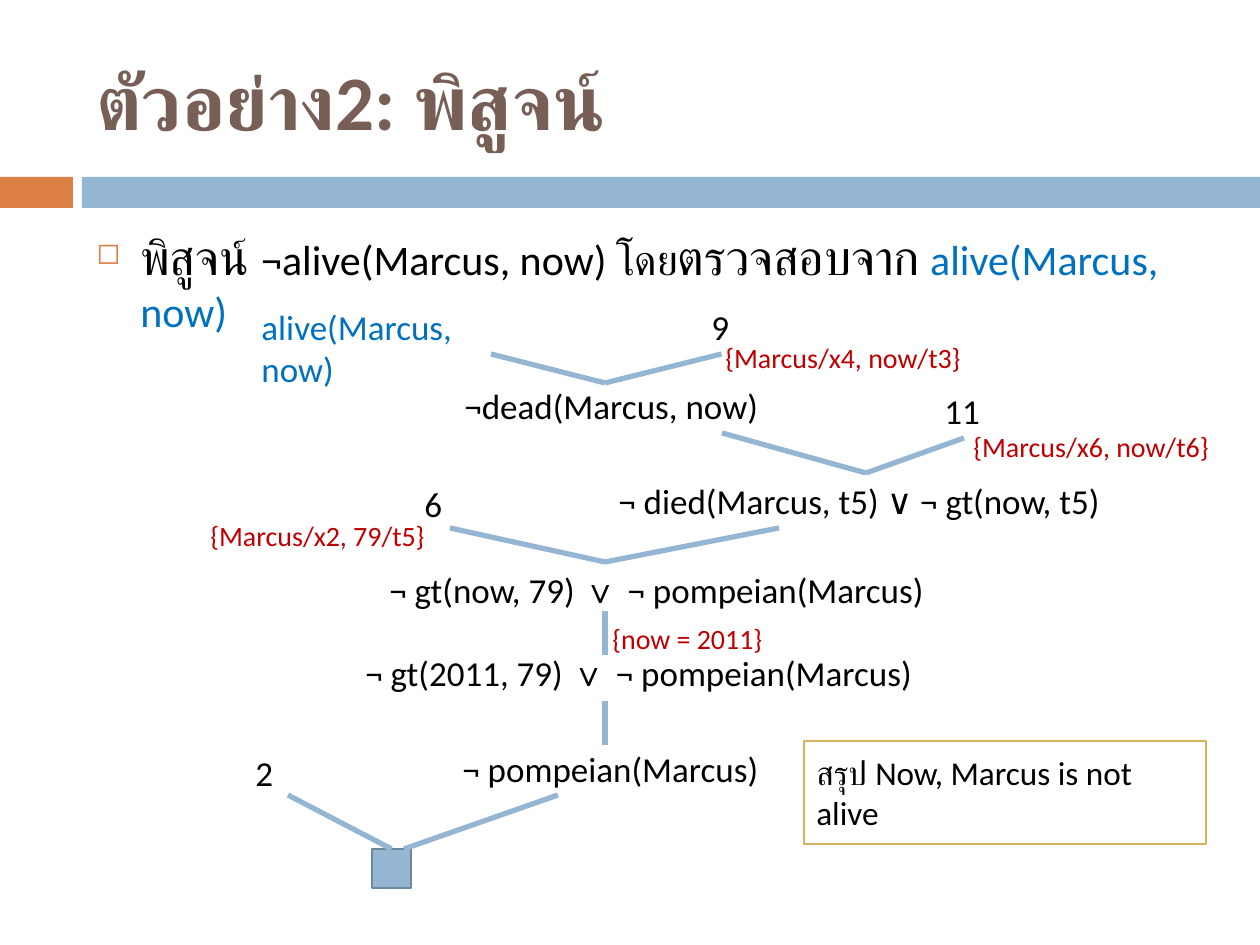
from lxml.etree import SubElement
from pptx import Presentation
from pptx.dml.color import RGBColor
from pptx.enum.shapes import MSO_CONNECTOR as Connector, MSO_SHAPE as Shape
from pptx.enum.text import MSO_ANCHOR as Anchor
from pptx.oxml.ns import qn
from pptx.util import Pt

PX = 914400 / 126
BLUE, ORANGE, BROWN, GOLD = "94B6D2", "DD8047", "775F55", "D8B25C"
BLACK, WHITE, RED, LINK, SLATE = "000000", "FFFFFF", "C00000", "0070C0", "6D879B"
TOP, BOTTOM = 0, 2

CLAUSES = {
    "alive": (51, 0, 284, LINK, ["alive(Marcus, now)"]),
    "nine": (501, 0, 45, BLACK, ["9"]),
    "dead": (254, 79, 336, BLACK, ["¬dead(Marcus, now)"]),
    "died": (408, 174, 520, BLACK, ["¬ died(Marcus, t5) ∨ ¬ gt(now, t5)"]),
    "eleven": (734, 84, 64, BLACK, ["11"]),
    "gt_now": (179, 263, 561, BLACK, ["¬ gt(now, 79) ", "∨ ", "¬ pompeian(Marcus)"]),
    "six": (214, 177, 45, BLACK, ["6"]),
    "gt_2011": (155, 346, 586, BLACK, ["¬ gt(2011, 79) ", "∨ ", "¬ pompeian(Marcus)"]),
    "pompeian": (252, 442, 329, BLACK, ["¬ pompeian(Marcus)"]),
    "two": (45, 446, 45, BLACK, ["2"]),
}
SUBSTITUTIONS = [
    (515, 35, 265, "{Marcus/x4, now/t3}"),
    (763, 124, 265, "{Marcus/x6, now/t6}"),
    (0, 213, 251, "{Marcus/x2, 79/t5}"),
    (402, 316, 186, "{now = 2011}"),
]
BRANCHES = [
    ((293, 55), (407, 84)),
    (("nine", BOTTOM), (407, 84)),
    ((524, 134), ("died", TOP)),
    (("eleven", BOTTOM), ("died", TOP)),
    ((252, 229), (407, 263)),
    ((581, 229), (407, 263)),
    ((407, 312), (407, 356)),
    ((407, 402), (407, 446)),
    ((90, 496), ("empty", TOP)),
    ((360, 496), (206, 550)),
]


def px(*values):
    """Turn pixel lengths into EMU."""
    return [round(value * PX) for value in values]


def color(code):
    """Turn a hex string into a colour."""
    return RGBColor.from_string(code)


def add_span(para, text, size, code, font="Calibri", bold=False):
    """Add one formatted run to a paragraph."""
    span = para.add_run()
    span.text = text
    span.font.size, span.font.name, span.font.bold = Pt(size), font, bold
    span.font.color.rgb = color(code)


def add_text(page, box, anchor=Anchor.TOP):
    """Add a wrapping text box and return it."""
    text_box = page.shapes.add_textbox(*px(*box))
    text_box.text_frame.word_wrap = True
    text_box.text_frame.vertical_anchor = anchor
    return text_box


def add_rect(page, box, fill, line=None):
    """Add a flat rectangle, outlined if a line colour is given."""
    rect = page.shapes.add_shape(Shape.RECTANGLE, *px(*box))
    rect.shadow.inherit = False
    rect.fill.solid()
    rect.fill.fore_color.rgb = color(fill)
    if line:
        rect.line.color.rgb = color(line)
        rect.line.width = Pt(1.5)
    else:
        rect.line.fill.background()
    return rect


def add_branch(page, origin, nodes, start, end):
    """Draw a line between points or connection sites of named nodes."""
    left, top = origin
    joined = [isinstance(spot[0], str) for spot in (start, end)]
    points = [(0, 0) if join else (left + spot[0], top + spot[1])
              for join, spot in zip(joined, (start, end))]
    branch = page.shapes.add_connector(Connector.STRAIGHT, *px(*points[0], *points[1]))
    branch.line.color.rgb = color(BLUE)
    branch.line.width = Pt(3)
    SubElement(branch._element.spPr, qn("a:effectLst"))
    for join, spot, connect in zip(joined, (start, end), (branch.begin_connect, branch.end_connect)):
        if join:
            connect(nodes[spot[0]], spot[1])


def add_band(page, box):
    """Draw the two-colour band under the title."""
    left, top, width, height = box
    add_rect(page, (left, top, 73, height), ORANGE)
    add_rect(page, (left + 82, top, width - 82, height), BLUE)


def add_title(page, box):
    """Write the slide title."""
    title = add_text(page, box, Anchor.MIDDLE)
    add_span(title.text_frame.paragraphs[0], "ตัวอย่าง2: พิสูจน์", 44, BROWN, bold=True)


def add_goal(page, box):
    """Write the bulleted statement to be proved."""
    para = add_text(page, box).text_frame.paragraphs[0]
    para.space_before = Pt(7)
    props = para._p.get_or_add_pPr()
    indent = px(44)[0]
    props.set("marL", str(indent))
    props.set("indent", str(-indent))
    SubElement(SubElement(props, qn("a:buClr")), qn("a:srgbClr")).set("val", ORANGE)
    SubElement(props, qn("a:buSzPct")).set("val", "60000")
    SubElement(props, qn("a:buChar")).set("char", "◻")
    for text, size, code in [
        ("พิสูจน์ ", 28, BLACK),
        ("¬alive(Marcus, now) โดย", 24, BLACK),
        ("ตรวจสอบจาก", 28, BLACK),
        (" ", 24, BLACK),
        ("alive(Marcus, now)", 24, LINK),
    ]:
        add_span(para, text, size, code)


def add_proof(page, box):
    """Draw the resolution tree with its clauses and substitutions."""
    left, top = box[:2]
    nodes = {}
    for name, (x, y, width, code, texts) in CLAUSES.items():
        nodes[name] = add_text(page, (left + x, top + y, width, 55))
        for text in texts:
            font = "Arial" if text == "∨ " else "Calibri"
            add_span(nodes[name].text_frame.paragraphs[0], text, 20, code, font)
    nodes["empty"] = add_rect(page, (left + 174, top + 550, 39, 39), BLUE, SLATE)
    for start, end in BRANCHES:
        add_branch(page, (left, top), nodes, start, end)
    for x, y, width, text in SUBSTITUTIONS:
        label = add_text(page, (left + x, top + y, width, 47))
        add_span(label.text_frame.paragraphs[0], text, 16, RED)


def add_conclusion(page, box):
    """Write the framed conclusion."""
    frame = add_rect(page, box, WHITE, GOLD).text_frame
    frame.word_wrap = True
    frame.vertical_anchor = Anchor.MIDDLE
    para = frame.paragraphs[0]
    para.alignment = 1
    add_span(para, "สรุป Now, Marcus is not alive", 19, BLACK)


def main():
    """Build and save the deck."""
    deck = Presentation()
    deck.slide_width, deck.slide_height = px(1260, 945)
    page = deck.slides.add_slide(deck.slide_layouts[6])
    add_band(page, (0, 177, 1260, 31))
    add_title(page, (84, 32, 1124, 136))
    add_goal(page, (84, 220, 1124, 620))
    add_proof(page, (198, 299, 1028, 589))
    add_conclusion(page, (804, 741, 402, 103))
    deck.save("out.pptx")


if __name__ == "__main__":
    main()
